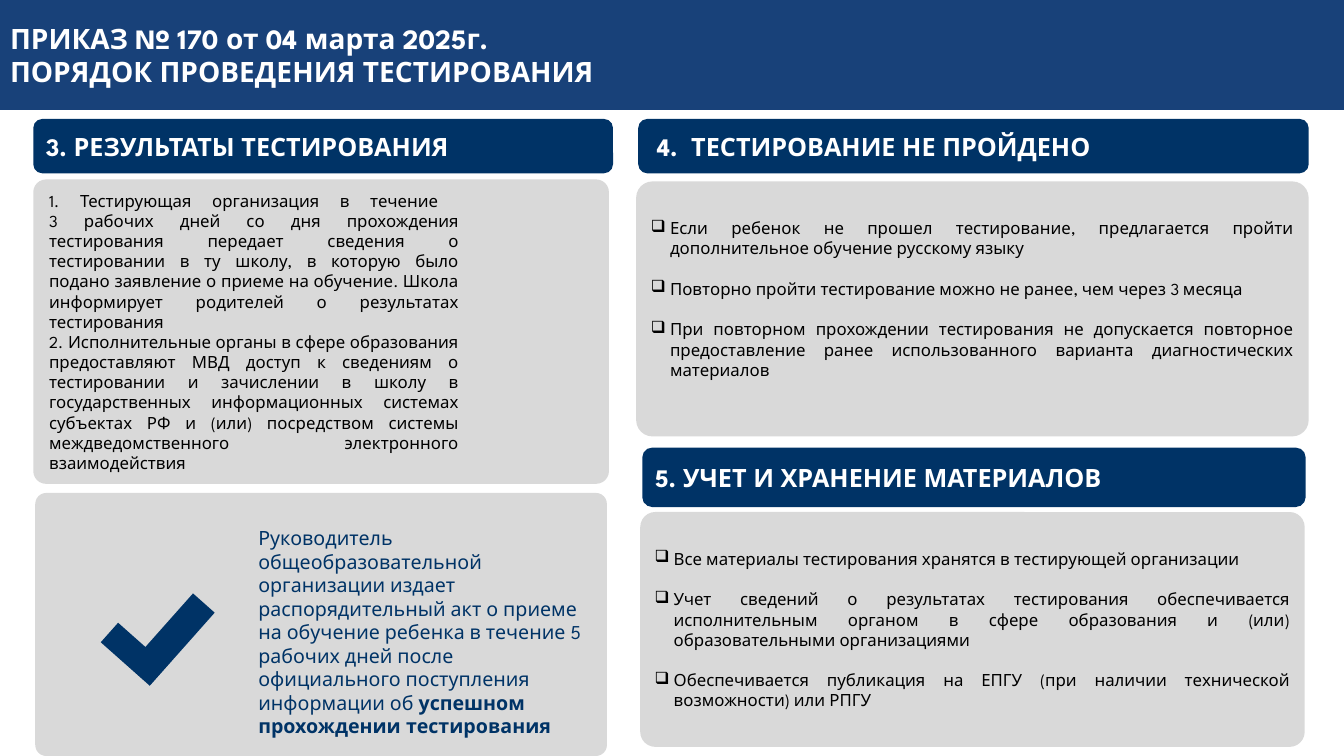
from dataclasses import dataclass
from lxml import etree
from pptx import Presentation
from pptx.dml.color import RGBColor
from pptx.enum.shapes import MSO_SHAPE
from pptx.enum.text import MSO_ANCHOR, MSO_AUTO_SIZE, PP_ALIGN
from pptx.oxml.ns import qn
from pptx.util import Inches, Pt

ROUNDED = MSO_SHAPE.ROUNDED_RECTANGLE
CORNER = MSO_SHAPE.CORNER
MIDDLE = MSO_ANCHOR.MIDDLE
NO_AUTOFIT = MSO_AUTO_SIZE.NONE
LEFT, JUSTIFY = PP_ALIGN.LEFT, PP_ALIGN.JUSTIFY


@dataclass(frozen=True)
class Theme:
    font: str = "League Spartan"
    banner: RGBColor = RGBColor(0x18, 0x41, 0x79)
    navy: RGBColor = RGBColor(0x00, 0x33, 0x66)
    panel: RGBColor = RGBColor(0xD9, 0xD9, 0xD9)
    white: RGBColor = RGBColor(0xFF, 0xFF, 0xFF)
    black: RGBColor = RGBColor(0x00, 0x00, 0x00)
    title_size: int = 20
    heading_size: int = 18
    decision_size: int = 14
    body_size: int = 12
    item_gap: float = 14.5


THEME = Theme()

TITLE = "ПРИКАЗ № 170 от 04 марта 2025г.\nПОРЯДОК ПРОВЕДЕНИЯ ТЕСТИРОВАНИЯ"

HEADINGS = [
    ("3. РЕЗУЛЬТАТЫ ТЕСТИРОВАНИЯ", (0.33, 1.18, 5.75, 0.54), 0.1),
    ("4.  ТЕСТИРОВАНИЕ НЕ ПРОЙДЕНО", (6.33, 1.18, 6.65, 0.54), 0.16),
    ("5. УЧЕТ И ХРАНЕНИЕ МАТЕРИАЛОВ", (6.37, 4.44, 6.58, 0.59), 0.1),
]

RESULTS = [
    " Тестирующая организация в течение \v3 рабочих дней со дня прохождения "
    "тестирования передает сведения о тестировании в ту школу, в которую было "
    "подано заявление о приеме на обучение. Школа информирует родителей о "
    "результатах тестирования",
    " Исполнительные органы в сфере образования предоставляют МВД доступ к "
    "сведениям о тестировании и зачислении в школу в государственных "
    "информационных системах субъектах РФ и (или) посредством системы "
    "междведомственного электронного взаимодействия",
]
RESULTS_BOX = (0.33, 1.78, 5.71, 3.02)

CHECKLISTS = [
    ([
        "Если ребенок не прошел тестирование, предлагается пройти "
        "дополнительное обучение русскому языку",
        "Повторно пройти тестирование можно не ранее, чем через 3 месяца",
        "При повторном прохождении тестирования не допускается повторное "
        "предоставление ранее использованного варианта диагностических материалов",
    ], (6.31, 1.8, 6.67, 2.53), 0.25),
    ([
        "Все материалы тестирования хранятся в тестирующей организации",
        "Учет сведений о результатах тестирования обеспечивается исполнительным "
        "органом в сфере образования и (или) образовательными организациями",
        "Обеспечивается публикация на ЕПГУ (при наличии технической "
        "возможности) или РПГУ",
    ], (6.35, 5.08, 6.59, 2.33), 0.05),
]

DECISION = (
    "Руководитель общеобразовательной организации издает распорядительный акт "
    "о приеме на обучение ребенка в течение 5 рабочих дней после официального "
    "поступления информации об "
)
DECISION_OUTCOME = "успешном прохождении тестирования"
DECISION_BOX = (0.35, 4.89, 5.67, 2.61)
CHECK_BOX = (1.24, 5.74, 0.65, 0.97)


def add_block(slide, preset, box, color, adjustments):
    block = slide.shapes.add_shape(preset, *map(Inches, box))
    block.shadow.inherit = False
    block.fill.solid()
    block.fill.fore_color.rgb = color
    block.line.fill.background()
    for index, value in enumerate(adjustments):
        block.adjustments[index] = value
    return block


def prepare_frame(block, left=0.1, top=0.05, right=0.1, bottom=0.05):
    frame = block.text_frame
    frame.word_wrap = True
    frame.auto_size = NO_AUTOFIT
    frame.vertical_anchor = MIDDLE
    frame.margin_left, frame.margin_right = Inches(left), Inches(right)
    frame.margin_top, frame.margin_bottom = Inches(top), Inches(bottom)
    return frame


def format_runs(frame, size, color, bold=False, align=LEFT):
    for paragraph in frame.paragraphs:
        paragraph.alignment = align
        for run in paragraph.runs:
            run.font.name = THEME.font
            run.font.size = Pt(size)
            run.font.bold = bold
            run.font.color.rgb = color


def fill_list(frame, items, marker, indent=0, gap=0):
    tag, attributes = marker
    for index, item in enumerate(items):
        paragraph = frame.add_paragraph() if index else frame.paragraphs[0]
        paragraph.text = item
        if index:
            paragraph.space_before = Pt(gap)
        properties = paragraph._p.get_or_add_pPr()
        properties.set("marL", str(Inches(indent)))
        properties.set("indent", str(-Inches(indent)))
        etree.SubElement(properties, qn(tag), attributes)
    format_runs(frame, THEME.body_size, THEME.black, align=JUSTIFY)


def add_title(slide):
    title = slide.shapes.title
    title.left, title.top = 0, 0
    title.width, title.height = Inches(13.33), Inches(1.09)
    title.fill.solid()
    title.fill.fore_color.rgb = THEME.banner
    frame = prepare_frame(title)
    frame.text = TITLE
    format_runs(frame, THEME.title_size, THEME.white, bold=True)
    for paragraph in frame.paragraphs:
        paragraph.space_before = Pt(0)


def add_decision(slide):
    panel = add_block(slide, ROUNDED, DECISION_BOX, THEME.panel, [0.042])
    frame = prepare_frame(panel, left=2.18, top=0.28, right=0.12, bottom=0.13)
    frame.text = DECISION
    outcome = frame.paragraphs[0].add_run()
    outcome.text = DECISION_OUTCOME
    format_runs(frame, THEME.decision_size, THEME.navy)
    outcome.font.bold = True
    check = add_block(slide, CORNER, CHECK_BOX, THEME.navy, [0.398, 0.443])
    check.rotation = 41.6
    check._element.spPr.find(qn("a:xfrm")).set("flipH", "1")


def main():
    deck = Presentation()
    deck.slide_width, deck.slide_height = Inches(13.33), Inches(7.5)
    slide = deck.slides.add_slide(deck.slide_layouts[5])
    add_title(slide)

    for heading, box, left in HEADINGS:
        bar = add_block(slide, ROUNDED, box, THEME.navy, [0.167])
        frame = prepare_frame(bar, left=left)
        frame.text = heading
        format_runs(frame, THEME.heading_size, THEME.white, bold=True)

    results = add_block(slide, ROUNDED, RESULTS_BOX, THEME.panel, [0.042])
    fill_list(prepare_frame(results, left=0.12, right=1.45), RESULTS,
              ("a:buAutoNum", {"type": "arabicPeriod"}))

    for items, box, bottom in CHECKLISTS:
        panel = add_block(slide, ROUNDED, box, THEME.panel, [0.064])
        fill_list(prepare_frame(panel, bottom=bottom), items,
                  ("a:buChar", {"char": "❑"}), indent=0.19, gap=THEME.item_gap)

    add_decision(slide)
    deck.save("out.pptx")


if __name__ == "__main__":
    main()
